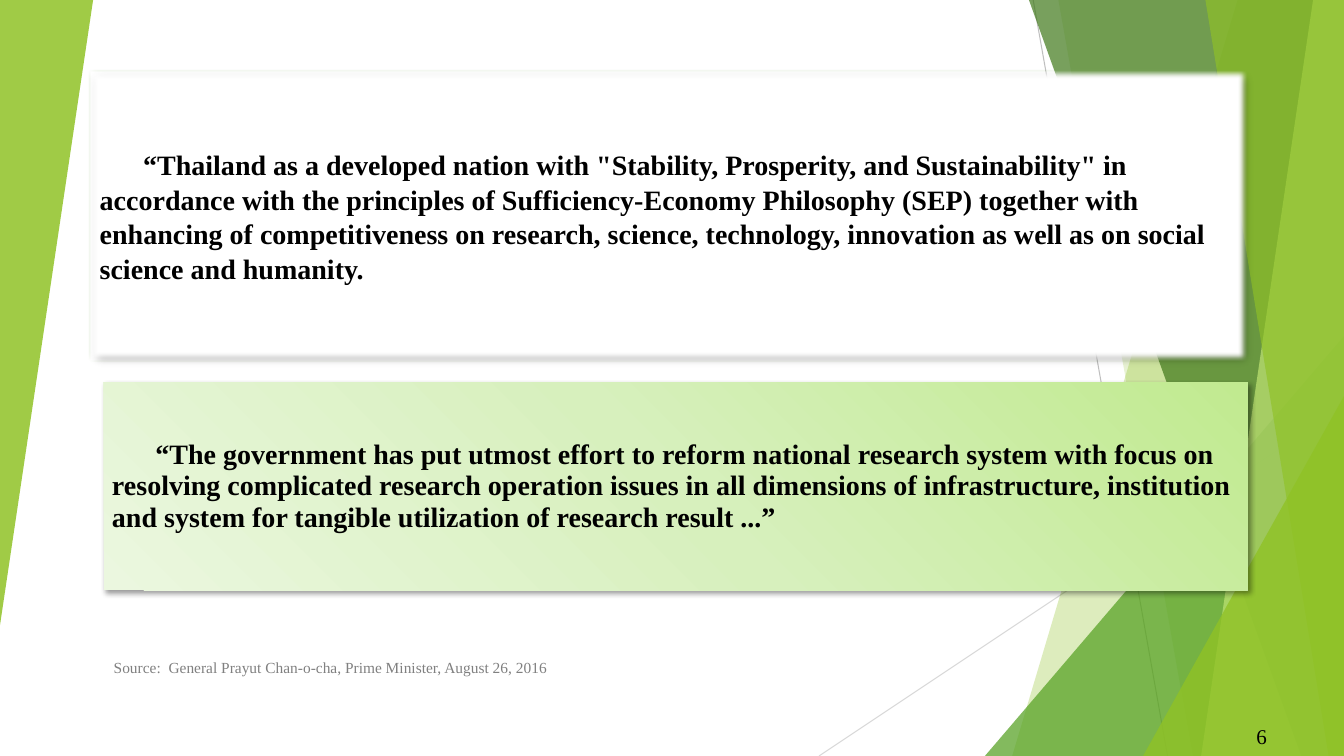
from lxml import etree
from pptx import Presentation
from pptx import util as u
from pptx.dml.color import RGBColor
from pptx.enum import shapes, text
from pptx.oxml import parse_xml
from pptx.oxml.ns import nsdecls, qn

Pt = u.Pt
W, H = 960, 540
FONT = "Times New Roman"
GREEN = "90C226"
VISION = (
    "“Thailand as a developed nation with \"Stability, Prosperity, and Sustainability\" in "
    "accordance with the principles of Sufficiency-Economy Philosophy (SEP) together with "
    "enhancing of competitiveness on research, science, technology, innovation as well as on "
    "social science and humanity."
)
REFORM = (
    "“The government has put utmost effort to reform national research system with focus on "
    "resolving complicated research operation issues in all dimensions of infrastructure, "
    "institution and system for tangible utilization of research result ...”"
)


def rgb(value):
    return RGBColor.from_string(value)


def place(sp, box):
    sp.left, sp.top, sp.width, sp.height = map(Pt, box)


def effects(sp, inner=""):
    """Give the shape or connector an effect list, empty by default."""
    pr = sp.element.spPr
    for old in pr.findall(qn("a:effectLst")):
        pr.remove(old)
    pr.append(parse_xml(f'<a:effectLst {nsdecls("a")}>{inner}</a:effectLst>'))


def shadow(sp, extra=""):
    effects(sp, '<a:outerShdw blurRad="50800" dist="38100" dir="2700000" algn="tl">'
                '<a:srgbClr val="000000"><a:alpha val="40000"/></a:srgbClr>'
                f'</a:outerShdw>{extra}')


def tint(sp, color, opacity):
    sp.fill.solid()
    sp.fill.fore_color.rgb = rgb(color)
    sp.line.fill.background()
    effects(sp)
    clr = sp.element.spPr.find(qn("a:solidFill")).find(qn("a:srgbClr"))
    etree.SubElement(clr, qn("a:alpha")).set("val", str(opacity * 1000))


def write(sp, words, size=20, color="000000", bold=False, indent=0, spacing=1.0,
          align=text.PP_ALIGN.LEFT, anchor=text.MSO_ANCHOR.MIDDLE, margins=(7.2, 3.6)):
    tf = sp.text_frame
    tf.word_wrap = True
    tf.auto_size = text.MSO_AUTO_SIZE.NONE
    tf.vertical_anchor = anchor
    tf.margin_left = tf.margin_right = Pt(margins[0])
    tf.margin_top = tf.margin_bottom = Pt(margins[1])
    p = tf.paragraphs[0]
    p.alignment = align
    p.line_spacing = spacing
    p.space_before = Pt(0)
    pPr = p._p.get_or_add_pPr()
    pPr.set("marL", "0")
    pPr.set("indent", str(Pt(indent)))
    r = p.add_run()
    r.text = words
    f = r.font
    f.name, f.size, f.bold = FONT, Pt(size), bold
    f.color.rgb = rgb(color)
    return r


def line(s, start, end, color):
    c = s.shapes.add_connector(shapes.MSO_CONNECTOR.STRAIGHT, *map(Pt, start + end))
    c.line.color.rgb = rgb(color)
    c.line.width = Pt(0.75)
    effects(c)


def band(s, top_x, bottom_x, color, opacity):
    """Full-height band from a slanted left edge to the right slide edge."""
    fb = s.shapes.build_freeform(Pt(top_x), Pt(0), scale=1.0)
    fb.add_line_segments([(Pt(x), Pt(y)) for x, y in ((W, 0), (W, H), (bottom_x, H))])
    tint(fb.convert_to_shape(), color, opacity)


def wedge(s, box, color, opacity, rotation=0):
    sp = s.shapes.add_shape(shapes.MSO_SHAPE.ISOSCELES_TRIANGLE, *map(Pt, box))
    sp.adjustments[0] = 1
    sp.rotation = rotation
    tint(sp, color, opacity)


def backdrop(s):
    line(s, (738, 0), (834, H), "BFBFBF")
    line(s, (W, 290), (585, H), "D9D9D9")
    band(s, 884, 723, GREEN, 30)
    band(s, 756, 852, GREEN, 20)
    wedge(s, (703.5, 240, W - 703.5, H - 240), "54A021", 72)
    band(s, 735, 929.5, "3F7819", 70)
    band(s, 938, 858, "C0E474", 70)
    band(s, 861, 949, GREEN, 65)
    wedge(s, (816.5, 283, W - 816.5, H - 283), GREEN, 80)
    wedge(s, (0, 0, 66.5, 446.5), GREEN, 85, rotation=180)


def vision_panel(s, box):
    sp = s.shapes.title
    sp.element.getparent().append(sp.element)  # bring in front of the backdrop
    place(sp, box)
    sp.fill.solid()
    sp.fill.fore_color.rgb = rgb("FFFFFF")
    sp.line.color.rgb = rgb("70AD47")
    sp.line.width = Pt(1)
    shadow(sp, '<a:softEdge rad="50800"/>')
    write(sp, VISION, bold=True, indent=31, spacing=1.04)


def source_note(s, box):
    sp = s.placeholders[1]
    sp.element.getparent().append(sp.element)
    place(sp, box)
    write(sp, "Source:  General Prayut Chan-o-cha, Prime Minister, August 26, 2016",
          size=11, color="808080", anchor=text.MSO_ANCHOR.TOP)


def reform_panel(s, box):
    sp = s.shapes.add_shape(shapes.MSO_SHAPE.RECTANGLE, *map(Pt, box))
    sp.line.fill.background()
    # Radial gradient spreading from the top right corner
    stops = "".join(f'<a:gs pos="{pos}000"><a:srgbClr val="{c}"/></a:gs>'
                    for pos, c in ((0, "C1EA90"), (50, "D7F0BD"), (100, "EBF7DF")))
    sp.element.spPr.find(qn("a:prstGeom")).addnext(parse_xml(
        f'<a:gradFill {nsdecls("a")}><a:gsLst>{stops}</a:gsLst><a:path path="circle">'
        '<a:fillToRect l="100000" b="100000"/></a:path></a:gradFill>'))
    shadow(sp)
    write(sp, REFORM, bold=True, indent=31, spacing=0.94, margins=(6, 3))


def page_number(s, box):
    sp = s.shapes.add_textbox(*map(Pt, box))
    r = write(sp, "6", size=15, align=text.PP_ALIGN.RIGHT)
    # Turn the run into a slide number field
    fld = parse_xml(f'<a:fld {nsdecls("a")} type="slidenum" '
                    'id="{B6F15528-21DE-4FAA-801E-634DDDAF4B2B}"/>')
    r._r.addprevious(fld)
    fld.extend(list(r._r))
    fld.getparent().remove(r._r)


def main():
    prs = Presentation()
    prs.slide_width, prs.slide_height = Pt(W), Pt(H)
    prs.element.set("firstSlideNum", "6")
    s = prs.slides.add_slide(prs.slide_layouts[0])
    backdrop(s)
    vision_panel(s, (64, 50.5, 826.5, 207))
    source_note(s, (74, 466.5, 605, 28))
    reform_panel(s, (74, 273, 817, 148.5))
    page_number(s, (718, 511, 194, 29))
    prs.save("out.pptx")


if __name__ == "__main__":
    main()
